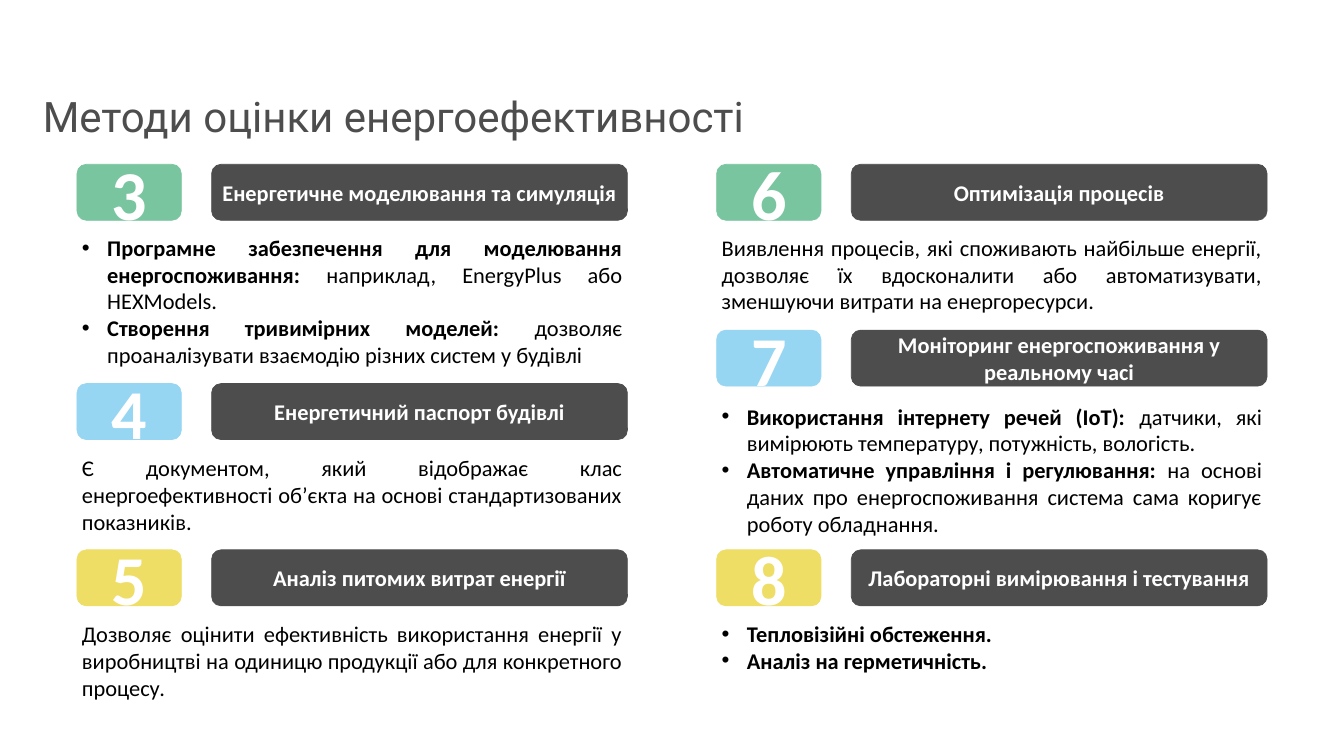
from lxml.etree import SubElement
from pptx import Presentation
from pptx.dml.color import RGBColor
from pptx.enum.shapes import MSO_SHAPE
from pptx.enum.text import MSO_ANCHOR, MSO_AUTO_SIZE, PP_ALIGN
from pptx.oxml.ns import qn
from pptx.util import Pt

COLORS = {"green": "79C59F", "blue": "96D6F3", "yellow": "EEDE66",
          "gray": "4D4D4D", "white": "FFFFFF", "black": "000000"}

LEFTS = (110, 1023.8)
BADGE_W, BAR_X, BAR_W, BAR_H = 149, 192.3, 594, 80
BODY_W = BAR_X + BAR_W
LINE_H, PAD = 38.9, 7.2

# Each section: number, colour, top, heading, body top, body lines,
# bulleted, paragraphs of (bold text, plain text)
COLUMNS = (
    (
        (3, "green", 234.7, "Енергетичне моделювання та симуляція", 330.5, 5, True, (
            ("Програмне забезпечення для моделювання енергоспоживання: ",
             "наприклад, EnergyPlus або HEXModels."),
            ("Створення тривимірних моделей: ",
             "дозволяє проаналізувати взаємодію різних систем у будівлі"))),
        (4, "blue", 548, "Енергетичний паспорт будівлі", 645, 3, False, (
            ("", "Є документом, який відображає клас енергоефективності об’єкта "
                 "на основі стандартизованих показників."),)),
        (5, "yellow", 785.5, "Аналіз питомих витрат енергії", 882, 3, False, (
            ("", "Дозволяє оцінити ефективність використання енергії у виробництві "
                 "на одиницю продукції або для конкретного процесу."),)),
    ),
    (
        (6, "green", 234.7, "Оптимізація процесів", 330.5, 3, False, (
            ("", "Виявлення процесів, які споживають найбільше енергії, дозволяє їх "
                 "вдосконалити або автоматизувати, зменшуючи витрати на енергоресурси."),)),
        (7, "blue", 471.6, "Моніторинг енергоспоживання у реальному часі", 571.7, 5, True, (
            ("Використання інтернету речей (ІоТ): ",
             "датчики, які вимірюють температуру, потужність, вологість."),
            ("Автоматичне управління і регулювання: ",
             "на основі даних про енергоспоживання система сама коригує "
             "роботу обладнання."))),
        (8, "yellow", 785.5, "Лабораторні вимірювання і тестування", 882, 2, True, (
            ("Тепловізійні обстеження.", ""),
            ("Аналіз на герметичність.", ""))),
    ),
)


class Deck:
    font = "Calibri"
    size = 32

    def __init__(self, slide):
        self.slide = slide

    def run(self, para, text, color, size=None, bold=False, font=None):
        run = para.add_run()
        run.text = text
        run.font.name = font or self.font
        run.font.size = Pt(size or self.size)
        run.font.bold = bold
        run.font.color.rgb = RGBColor.from_string(COLORS[color])

    def bullet(self, para):
        props = para._p.get_or_add_pPr()
        props.set("marL", str(Pt(36)))
        props.set("indent", str(-Pt(36)))
        SubElement(props, qn("a:buFont"), typeface="Arial")
        SubElement(props, qn("a:buChar"), char="•")

    def title(self, text):
        box = self.slide.shapes.add_textbox(Pt(54), Pt(136.8), Pt(1841.8), Pt(64.8))
        frame = box.text_frame
        frame.word_wrap = True
        frame.vertical_anchor = MSO_ANCHOR.MIDDLE
        para = frame.paragraphs[0]
        para.line_spacing = 0.9
        self.run(para, text, "gray", 60, font="Roboto")

    def bar(self, left, top, width, fill, text, size=None):
        """Add a rounded bar with bold centred white text."""
        bar = self.slide.shapes.add_shape(
            MSO_SHAPE.ROUNDED_RECTANGLE, Pt(left), Pt(top), Pt(width), Pt(BAR_H))
        bar.shadow.inherit = False
        color = RGBColor.from_string(COLORS[fill])
        bar.fill.solid()
        bar.fill.fore_color.rgb = color
        bar.line.color.rgb = color
        bar.line.width = Pt(1)
        frame = bar.text_frame
        frame.word_wrap = True
        frame.vertical_anchor = MSO_ANCHOR.MIDDLE
        para = frame.paragraphs[0]
        para.alignment = PP_ALIGN.CENTER
        self.run(para, text, "white", size, bold=True)

    def body(self, left, top, lines, listed, paras):
        box = self.slide.shapes.add_textbox(
            Pt(left), Pt(top), Pt(BODY_W), Pt(lines * LINE_H + PAD))
        frame = box.text_frame
        frame.word_wrap = True
        frame.auto_size = MSO_AUTO_SIZE.SHAPE_TO_FIT_TEXT
        for i, (lead, rest) in enumerate(paras):
            para = frame.add_paragraph() if i else frame.paragraphs[0]
            if listed:
                self.bullet(para)
            para.alignment = PP_ALIGN.JUSTIFY
            if lead:
                self.run(para, lead, "black", bold=True)
            if rest:
                self.run(para, rest, "black")


def main():
    show = Presentation()
    show.slide_width, show.slide_height = Pt(1920), Pt(1080)
    deck = Deck(show.slides.add_slide(show.slide_layouts[6]))
    deck.title("Методи оцінки енергоефективності")
    for left, parts in zip(LEFTS, COLUMNS):
        for number, color, top, head, start, lines, listed, paras in parts:
            deck.bar(left, top, BADGE_W, color, str(number), 100)
            deck.bar(left + BAR_X, top, BAR_W, "gray", head)
            deck.body(left, start, lines, listed, paras)
    show.save("out.pptx")


if __name__ == "__main__":
    main()
